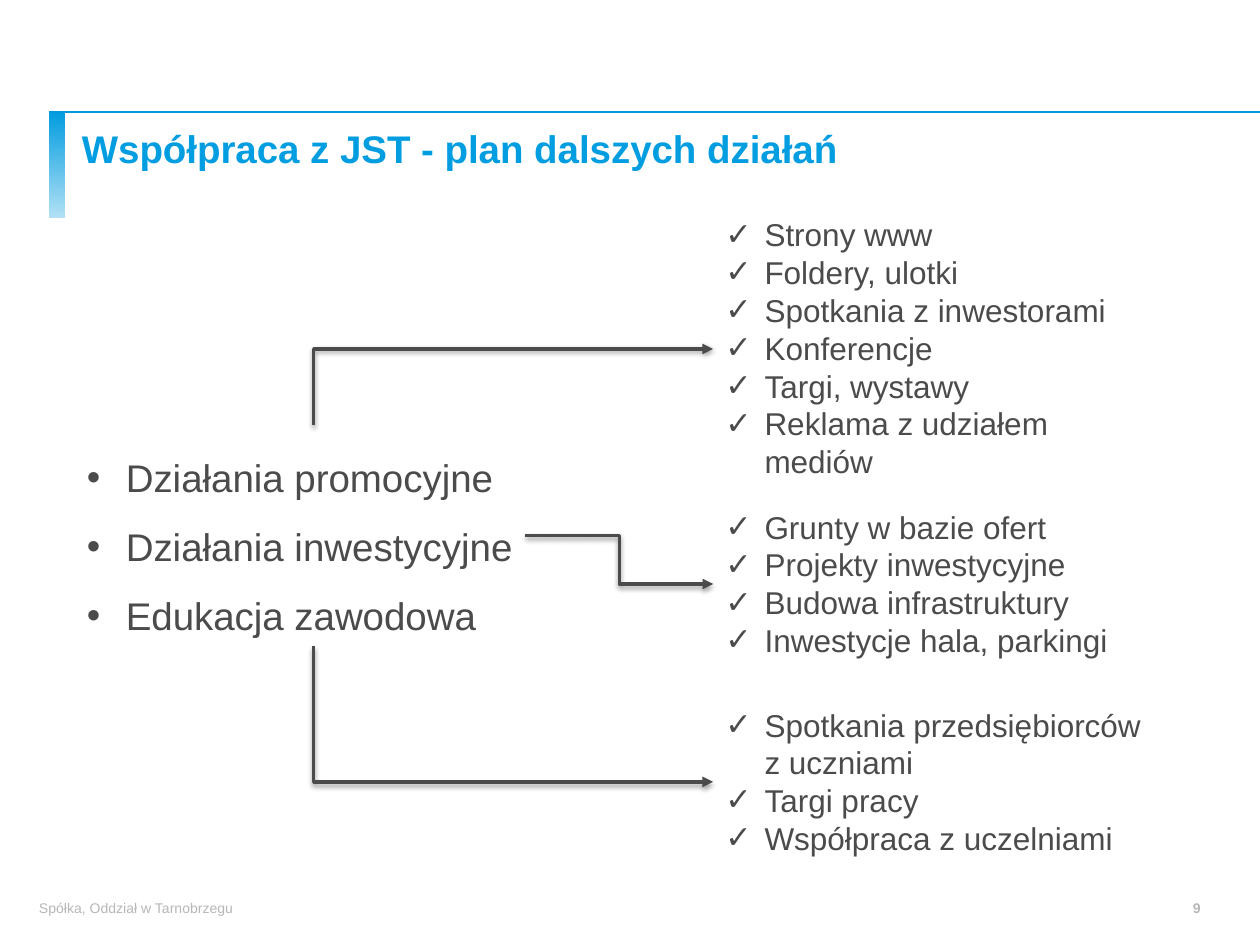
"""Build the slide on planned cooperation with local authorities."""
from lxml import etree
from pptx import Presentation
from pptx.dml.color import RGBColor
from pptx.enum.shapes import MSO_CONNECTOR, MSO_SHAPE
from pptx.enum.text import MSO_ANCHOR, MSO_AUTO_SIZE, PP_ALIGN
from pptx.oxml.ns import qn
from pptx.util import Inches, Pt

ELBOW, STRAIGHT = MSO_CONNECTOR.ELBOW, MSO_CONNECTOR.STRAIGHT
RECTANGLE = MSO_SHAPE.RECTANGLE
TOP, BOTTOM = MSO_ANCHOR.TOP, MSO_ANCHOR.BOTTOM
GROW = MSO_AUTO_SIZE.SHAPE_TO_FIT_TEXT
LEFT, RIGHT = PP_ALIGN.LEFT, PP_ALIGN.RIGHT

COLORS = {"accent": "009DE0", "rule": "009ADB", "body": "4B4B4B",
          "footer": "B7B7B7", "shadow": "000000"}
FONT = "Arial"
INDENT = 0.31
DETAIL_LEFT = 5.66
STEM_X = 2.49

TITLE = "Współpraca z JST - plan dalszych działań"
FOOTER = "Spółka, Oddział w Tarnobrzegu"
PAGE_NUMBER = "9"
ACTIVITIES = ["Działania promocyjne", "Działania inwestycyjne", "Edukacja zawodowa"]
DETAILS = [
    {"top": 1.66, "width": 3.46, "height": 2.22, "items": [
        "Strony www", "Foldery, ulotki", "Spotkania z inwestorami", "Konferencje",
        "Targi, wystawy", "Reklama z udziałem mediów"]},
    {"top": 3.98, "width": 3.46, "height": 1.31, "items": [
        "Grunty w bazie ofert", "Projekty inwestycyjne", "Budowa infrastruktury",
        "Inwestycje hala, parkingi"]},
    {"top": 5.55, "width": 3.6, "height": 1.31, "items": [
        "Spotkania przedsiębiorców z uczniami", "Targi pracy",
        "Współpraca z uczelniami"]},
]


def color(name):
    return RGBColor.from_string(COLORS[name])


def add_child(parent, tag, **attributes):
    child = etree.SubElement(parent, qn(tag))
    for key, value in attributes.items():
        child.set(key, str(value))
    return child


def add_text(slide, box, lines, size, color_name, bold=False, align=LEFT,
             anchor=TOP, bullet=None, spacing=None, grow=True):
    shape = slide.shapes.add_textbox(*map(Inches, box))
    frame = shape.text_frame
    frame.text = "\n".join(lines)
    frame.word_wrap = True
    frame.vertical_anchor = anchor
    if grow:
        frame.auto_size = GROW
    if not bullet:
        frame.margin_left = frame.margin_right = 0
        frame.margin_top = frame.margin_bottom = 0
    for paragraph in frame.paragraphs:
        paragraph.alignment = align
        if spacing:
            paragraph.line_spacing = spacing
        if bullet:
            properties = paragraph._p.get_or_add_pPr()
            properties.set("marL", str(Inches(INDENT)))
            properties.set("indent", str(-Inches(INDENT)))
            add_child(properties, "a:buFont", typeface=FONT)
            add_child(properties, "a:buChar", char=bullet)
        for run in paragraph.runs:
            run.font.name = FONT
            run.font.size = Pt(size)
            run.font.bold = bold
            run.font.color.rgb = color(color_name)


def add_line(slide, kind, start, end, color_name, width):
    line = slide.shapes.add_connector(kind, *map(Inches, (*start, *end)))
    line.line.color.rgb = color(color_name)
    line.line.width = Pt(width)
    return line, add_child(line._element.spPr, "a:effectLst")


def add_arrow(slide, start, end, corner=False):
    rotation = 0
    if corner:
        center_x, center_y = (start[0] + end[0]) / 2, (start[1] + end[1]) / 2
        half_x, half_y = (end[0] - start[0]) / 2, (end[1] - start[1]) / 2
        rotation = 270 if half_y > 0 else 90
        flip = 1 if half_y > 0 else -1
        start = center_x + abs(half_y), center_y - flip * half_x
        end = center_x - abs(half_y), center_y + flip * half_x
    arrow, effects = add_line(slide, ELBOW, start, end, "body", 2)
    properties = arrow._element.spPr
    if corner:
        properties.find(qn("a:xfrm")).set("rot", str(rotation * 60000))
        properties.find(qn("a:prstGeom")).set("prst", "bentConnector2")
    add_child(properties.find(qn("a:ln")), "a:tailEnd", type="triangle")
    shadow = add_child(effects, "a:outerShdw", blurRad=Pt(3.1), dist=Pt(1.6),
                       dir=90 * 60000, rotWithShape=0)
    shade = add_child(shadow, "a:srgbClr", val=COLORS["shadow"])
    add_child(shade, "a:alpha", val=38000)


def add_title_bar(slide):
    bar = slide.shapes.add_shape(RECTANGLE, *map(Inches, (0.39, 0.89, 0.12, 0.84)))
    bar.shadow.inherit = False
    bar.line.fill.background()
    bar.fill.gradient()
    bar.fill.gradient_angle = 270
    for stop, position in zip(bar.fill.gradient_stops, (0, 1)):
        stop.color.rgb = color("accent")
        stop.position = position
    last_color = bar._element.spPr.findall(".//" + qn("a:srgbClr"))[-1]
    add_child(last_color, "a:alpha", val=30000)


def main():
    presentation = Presentation()
    presentation.slide_width, presentation.slide_height = Inches(10), Inches(7.5)
    slide = presentation.slides.add_slide(presentation.slide_layouts[6])

    add_title_bar(slide)
    add_line(slide, STRAIGHT, (0.39, 0.89), (10, 0.89), "rule", 0.75)
    add_text(slide, (0.65, 0.99, 8.39, 0.37), [TITLE], 22, "accent", bold=True)
    add_text(slide, (0.31, 7.14, 7.76, 0.13), [FOOTER], 8, "footer", anchor=BOTTOM)
    add_text(slide, (8.9, 7.14, 0.63, 0.13), [PAGE_NUMBER], 8, "footer", bold=True,
             align=RIGHT, anchor=BOTTOM, grow=False)
    add_text(slide, (0.59, 3.37, 3.79, 1.77), ACTIVITIES, 22, "body",
             bullet="•", spacing=1.5)

    starts = [(STEM_X, 3.37), (4.17, 4.25), (STEM_X, 5.13)]
    for detail, start in zip(DETAILS, starts):
        top, height = detail["top"], detail["height"]
        add_text(slide, (DETAIL_LEFT, top, detail["width"], height),
                 detail["items"], 18, "body", bullet="✓")
        add_arrow(slide, start, (DETAIL_LEFT, top + height / 2),
                  corner=start[0] == STEM_X)

    presentation.save("out.pptx")


if __name__ == "__main__":
    main()
